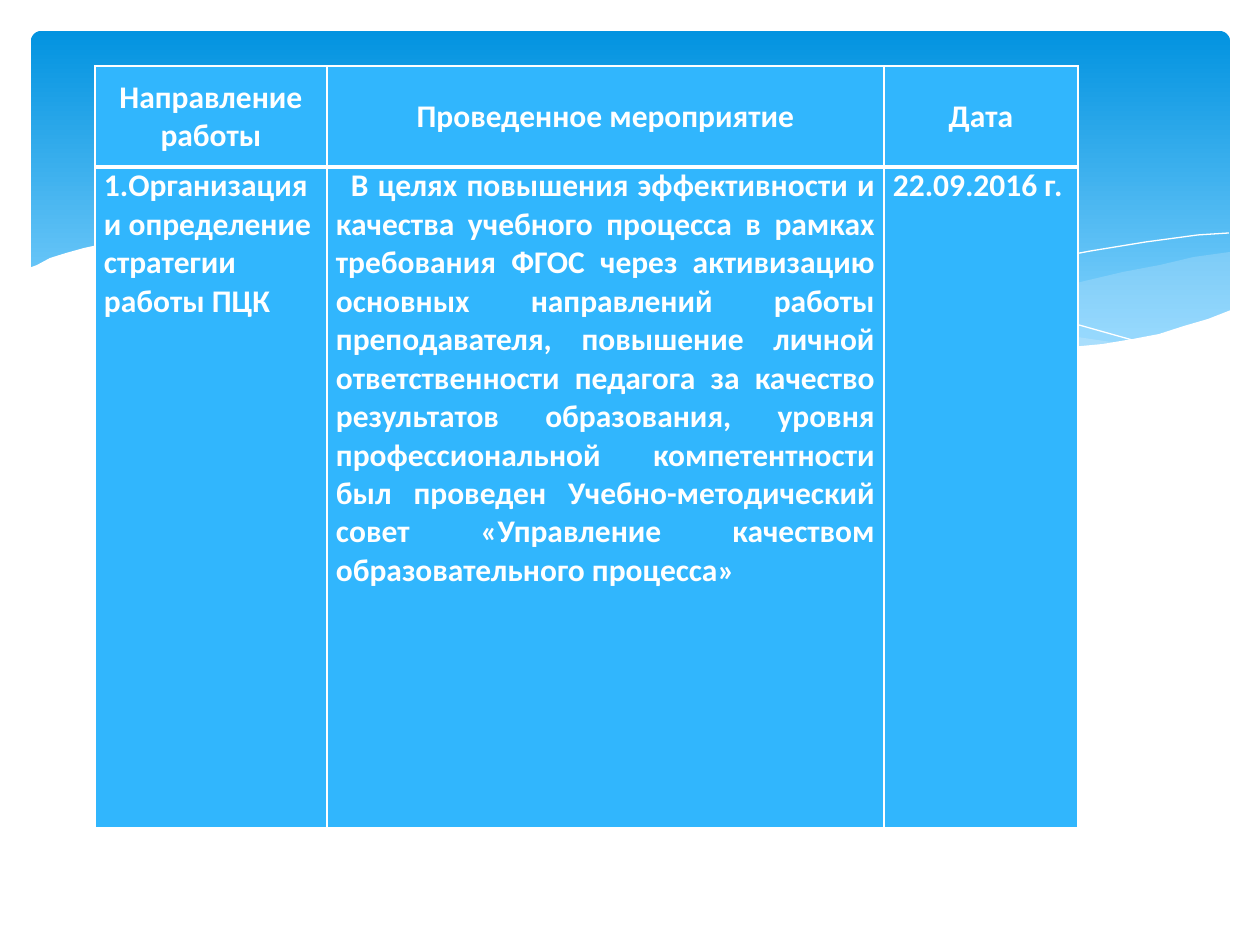
from lxml import etree
from pptx import Presentation
from pptx.dml.color import RGBColor
from pptx.enum.shapes import MSO_SHAPE
from pptx.enum.text import MSO_ANCHOR, PP_ALIGN
from pptx.oxml.ns import qn
from pptx.util import Pt

ROUNDED = MSO_SHAPE.ROUNDED_RECTANGLE
TOP, MIDDLE = MSO_ANCHOR.TOP, MSO_ANCHOR.MIDDLE
LEFT, CENTER, JUSTIFY = PP_ALIGN.LEFT, PP_ALIGN.CENTER, PP_ALIGN.JUSTIFY
SCALE = 914400 // 126
COLORS = {"white": "FFFFFF", "deep": "0293E0", "sky": "83D3FE", "pale": "C6E7FC", "cell": "31B6FD"}

RIGHT_LOBE = [
    (1230, 252), (1194, 257), (1160, 265), (1123, 272), (1085, 281), (1014, 299), (949, 312),
    (890, 324), (833, 334), (871, 339), (906, 343), (954, 348), (1012, 350), (1076, 348),
    (1110, 344), (1140, 339), (1169, 331), (1196, 324), (1230, 311),
]
WIDE_LOBE = [
    (1125, 344), (1091, 339), (1017, 328), (934, 311), (842, 291), (793, 280), (753, 270),
    (699, 258), (648, 249), (586, 241), (529, 236), (479, 233), (433, 234), (394, 237),
    (360, 241), (407, 247), (456, 256), (509, 266), (566, 280), (668, 302), (757, 321),
    (819, 333), (876, 340), (942, 348), (1003, 350), (1068, 349), (1104, 347),
]
FALLING_LINE = [
    (389, 246), (413, 242), (445, 238), (488, 236), (545, 236), (591, 238), (643, 242),
    (701, 248), (766, 257), (838, 268), (916, 285), (1002, 304), (1047, 316), (1143, 343),
]
RISING_LINE = [
    (772, 324), (823, 310), (876, 296), (942, 281), (1016, 265), (1091, 251), (1146, 242),
    (1198, 235), (1229, 233),
]
WHITE_WAVE = [
    (1231, 310), (1208, 319), (1184, 326), (1159, 334), (1133, 339), (1103, 344), (1071, 347),
    (1037, 349), (999, 348), (959, 347), (915, 343), (867, 338), (816, 330), (760, 320),
    (699, 309), (634, 294), (563, 277), (527, 268), (460, 255), (398, 244), (341, 237),
    (290, 233), (243, 232), (203, 232), (166, 234), (134, 238), (107, 243), (84, 248),
    (66, 253), (50, 258), (37, 265), (29, 268), (29, 415), (1231, 415),
]
HEADERS = ["Направление работы", "Проведенное мероприятие", "Дата"]
DETAILS = [
    "1.Организация и определение стратегии работы ПЦК",
    "В целях повышения эффективности и качества учебного процесса в рамках требования ФГОС "
    "через активизацию основных направлений работы преподавателя, повышение личной "
    "ответственности педагога за качество результатов образования, уровня профессиональной "
    "компетентности был проведен Учебно-методический совет «Управление качеством "
    "образовательного процесса»",
    "22.09.2016 г.",
]


def px(length):
    return length * SCALE


def color(name):
    return RGBColor.from_string(COLORS[name])


def write_text(frame, text, size=18, font="Calibri", ink="white", bold=True, align=LEFT, indent=0):
    para = frame.paragraphs[0]
    para.alignment = align
    if indent:
        para._p.get_or_add_pPr().set("indent", str(px(indent)))
    span = para.add_run()
    span.text = text
    span.font.size = Pt(size)
    span.font.name = font
    span.font.bold = bold
    span.font.color.rgb = color(ink)


class SlidePainter:
    def __init__(self, slide):
        self.slide = slide
        self.cell_fill = "cell"
        self.rule = "white"
        self.inset = 9

    def gradient_panel(self, left, top, width, height, radius, stops):
        panel = self.slide.shapes.add_shape(ROUNDED, px(left), px(top), px(width), px(height))
        panel.shadow.inherit = False
        panel.adjustments[0] = radius
        panel.line.fill.background()
        panel.fill.gradient()
        panel.fill.gradient_angle = 270
        for stop, (position, name) in zip(panel.fill.gradient_stops, stops):
            stop.position = position
            stop.color.rgb = color(name)

    def outline(self, points, closed):
        builder = self.slide.shapes.build_freeform(*points[0], scale=SCALE)
        builder.add_line_segments(points[1:], close=closed)
        shape = builder.convert_to_shape()
        shape.shadow.inherit = False
        return shape

    def area(self, points, name, opacity=100):
        shape = self.outline(points, True)
        shape.line.fill.background()
        shape.fill.solid()
        shape.fill.fore_color.rgb = color(name)
        if opacity < 100:
            tint = shape._element.spPr.find(qn("a:solidFill"))[0]
            etree.SubElement(tint, qn("a:alpha"), val=str(opacity * 1000))

    def curve(self, points):
        shape = self.outline(points, False)
        shape.fill.background()
        shape.line.color.rgb = color(self.rule)
        shape.line.width = Pt(0)

    def borders(self, cell, **widths):
        properties = cell._tc.get_or_add_tcPr()
        for side in "LRTB":
            width = Pt(widths.get(side, 1))
            border = etree.SubElement(properties, qn(f"a:ln{side}"), w=str(width))
            fill = etree.SubElement(border, qn("a:solidFill"))
            etree.SubElement(fill, qn("a:srgbClr"), val=COLORS[self.rule])

    def cell(self, cell, text, anchor=TOP, widths=None, **text_format):
        self.borders(cell, **(widths or {}))
        cell.fill.solid()
        cell.fill.fore_color.rgb = color(self.cell_fill)
        cell.margin_left = cell.margin_right = px(self.inset)
        cell.margin_top = cell.margin_bottom = 0
        cell.vertical_anchor = anchor
        write_text(cell.text_frame, text, **text_format)

    def table(self, left, top, widths, heights):
        frame = self.slide.shapes.add_table(
            len(heights), len(widths), px(left), px(top), px(sum(widths)), px(sum(heights)))
        table = frame.table
        table.first_row = table.horz_banding = False
        for column, width in zip(table.columns, widths):
            column.width = px(width)
        for row, height in zip(table.rows, heights):
            row.height = px(height)
        return table


def main():
    deck = Presentation()
    deck.slide_width, deck.slide_height = px(1260), px(945)
    page = SlidePainter(deck.slides.add_slide(deck.slide_layouts[6]))

    page.gradient_panel(31, 31, 1199, 340, 0.03, [(0, "deep"), (0.9, "sky")])
    page.area(RIGHT_LOBE, "pale", opacity=29)
    page.area(WIDE_LOBE, "pale", opacity=40)
    page.curve(FALLING_LINE)
    page.curve(RISING_LINE)
    page.area(WHITE_WAVE, "white")

    table = page.table(95, 66, [232, 557, 194], [101, 661])
    for column, text in enumerate(HEADERS):
        page.cell(table.cell(0, column), text, anchor=MIDDLE, widths={"B": 3}, align=CENTER)
    detail_formats = [{}, {"align": JUSTIFY, "indent": 15}, {}]
    for column, (text, text_format) in enumerate(zip(DETAILS, detail_formats)):
        page.cell(table.cell(1, column), text, widths={"T": 3}, **text_format)

    deck.save("out.pptx")


if __name__ == "__main__":
    main()
